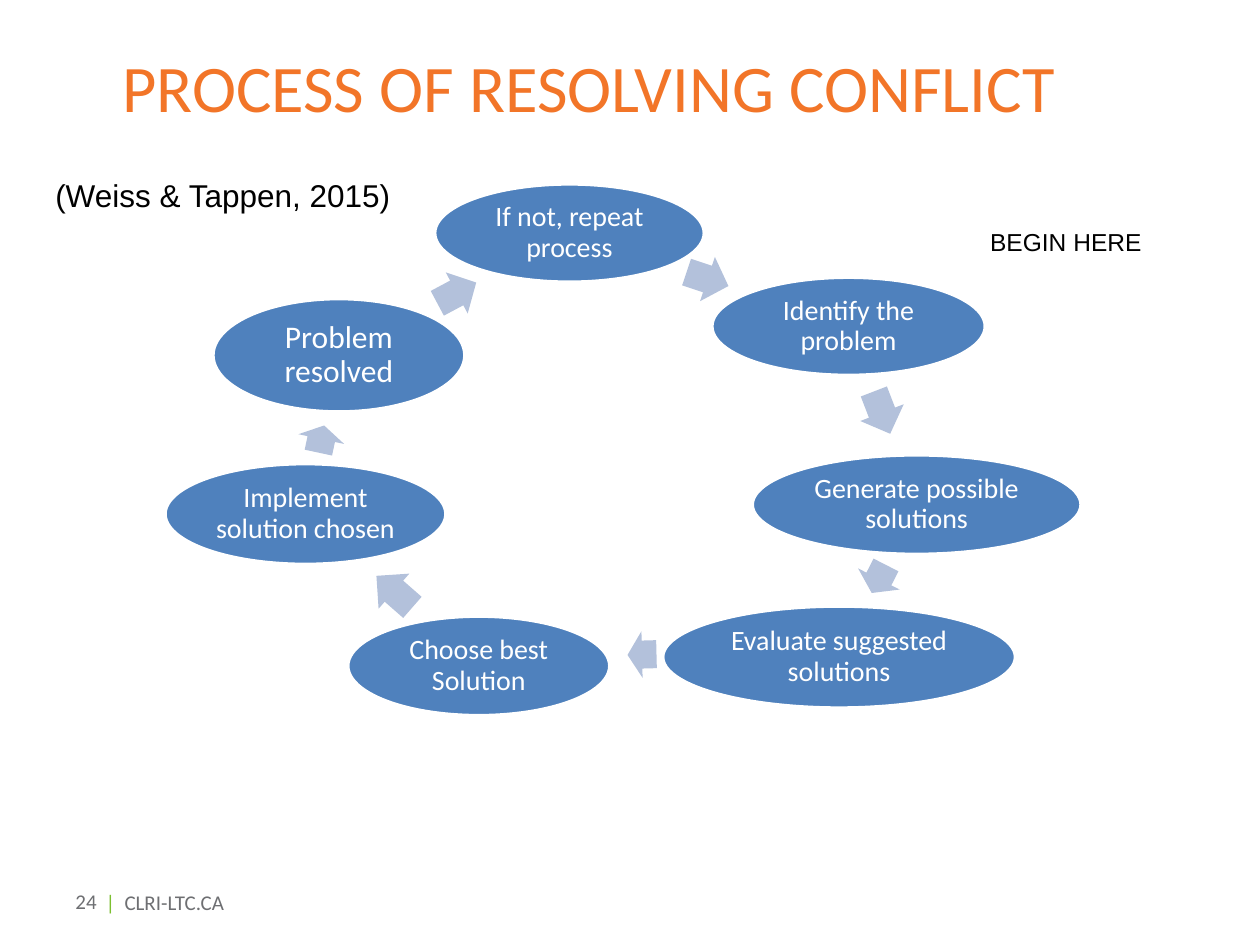
from dataclasses import dataclass

from lxml import etree
from pptx import Presentation
from pptx.dml.color import RGBColor
from pptx.enum.shapes import MSO_SHAPE
from pptx.enum.text import MSO_ANCHOR, MSO_AUTO_SIZE, PP_ALIGN
from pptx.oxml.ns import qn
from pptx.util import Inches, Pt

OVAL, ARROW = MSO_SHAPE.OVAL, MSO_SHAPE.RIGHT_ARROW
TOP, MIDDLE = MSO_ANCHOR.TOP, MSO_ANCHOR.MIDDLE
LEFT, CENTER = PP_ALIGN.LEFT, PP_ALIGN.CENTER
FIXED = MSO_AUTO_SIZE.NONE

WIDE, HIGH = 10, 7.5
COLS, ROWS = 100, 75


@dataclass(frozen=True)
class Theme:
    head: str = "F27528"
    step: str = "4F81BD"
    arrow: str = "B3C1DB"
    light: str = "FFFFFF"
    dark: str = "000000"
    gray: str = "6E6F72"
    green: str = "7CBF30"
    main: str = "Calibri"
    plain: str = "Arial"
    title: int = 38
    large: int = 18
    body: int = 16
    note: int = 14
    foot: int = 12


class Deck:
    def __init__(self, theme):
        self.theme = theme
        self.file = Presentation()
        self.file.slide_width = Inches(WIDE)
        self.file.slide_height = Inches(HIGH)
        self.slide = self.file.slides.add_slide(self.file.slide_layouts[5])

    def place(self, col, row, wide, high):
        """Turn grid columns and rows into lengths."""
        x, y = WIDE / COLS, HIGH / ROWS
        return [Inches(n) for n in (col * x, row * y, wide * x, high * y)]

    def add_runs(self, shape, runs, size, font, anchor=TOP, align=LEFT):
        """Fill a shape's first paragraph with (text, colour) runs."""
        frame = shape.text_frame
        frame.word_wrap = True
        frame.auto_size = FIXED
        frame.vertical_anchor = anchor
        para = frame.paragraphs[0]
        para.alignment = align
        for text, color in runs:
            run = para.add_run()
            run.text = text
            run.font.size = Pt(size)
            run.font.name = font
            run.font.color.rgb = RGBColor.from_string(color)
        return para

    def title(self, text, box):
        shape = self.slide.shapes.title
        shape.left, shape.top, shape.width, shape.height = self.place(*box)
        self.add_runs(shape, [(text, self.theme.head)], self.theme.title,
                      self.theme.main, MIDDLE)

    def label(self, runs, box, size, font, anchor=TOP):
        shape = self.slide.shapes.add_textbox(*self.place(*box))
        return self.add_runs(shape, runs, size, font, anchor)

    def form(self, kind, box, color):
        shape = self.slide.shapes.add_shape(kind, *self.place(*box))
        shape.shadow.inherit = False
        shape.fill.solid()
        shape.fill.fore_color.rgb = RGBColor.from_string(color)
        shape.line.fill.background()
        return shape

    def step(self, text, box, size):
        shape = self.form(OVAL, box, self.theme.step)
        shape.line.color.rgb = RGBColor.from_string(self.theme.light)
        shape.line.width = Pt(2)
        frame = shape.text_frame
        frame.margin_left = frame.margin_right = Inches(0.02)
        frame.margin_top = frame.margin_bottom = Inches(0.02)
        para = self.add_runs(shape, [(text, self.theme.light)], size,
                             self.theme.main, MIDDLE, CENTER)
        para.line_spacing = 0.9

    def arrow(self, col, row, wide, turn):
        shape = self.form(ARROW, (col, row, wide, 3.7), self.theme.arrow)
        shape.adjustments[0], shape.adjustments[1] = 0.6, 0.5
        shape.rotation = turn

    def tab(self, para, inch):
        props = para._p.get_or_add_pPr()
        tabs = etree.SubElement(props, qn("a:tabLst"))
        etree.SubElement(tabs, qn("a:tab"), pos=str(Inches(inch)), algn="l")


def main():
    look = Theme()
    deck = Deck(look)

    # Footer
    deck.label([("24", look.gray)], (5, 69.5, 8.5, 4), look.foot,
               look.main, MIDDLE)
    foot = deck.label([("|", look.green), ("\tCLRI-LTC.CA", look.gray)],
                      (7.4, 70.1, 30.3, 3), look.foot, look.main)
    deck.tab(foot, 0.15)

    # Title
    deck.title("PROCESS OF RESOLVING CONFLICT", (8.7, 2.7, 86.7, 8.3))

    # Cycle: step text, its box, its type size, then the arrow that leaves it
    cycle = [
        ("If not, repeat process", (34.5, 14.6, 21.4, 7.8), look.body,
         (54.4, 20.3, 3.5, 18.5)),
        ("Identify the problem", (56.5, 22, 21.7, 7.8), look.body,
         (68.2, 30.9, 3.6, 68.9)),
        ("Generate possible solutions", (59.7, 36.1, 26.1, 7.9), look.body,
         (68.5, 44.1, 2.5, 117)),
        ("Evaluate suggested solutions", (52.6, 48.1, 28, 8.1), look.body,
         (49.8, 50.1, 2.3, 178.5)),
        ("Choose best Solution", (27.6, 48.9, 20.8, 7.9), look.body,
         (29.4, 45.1, 3.8, 221.2)),
        ("Implement solution chosen", (13.1, 36.8, 22.3, 8), look.body,
         (24.4, 33, 2.2, 282)),
        ("Problem resolved", (16.9, 23.7, 20, 9), look.large,
         (34.5, 21.4, 3.5, 331.9)),
    ]
    for text, box, size, arrow in cycle:
        deck.step(text, box, size)
        deck.arrow(*arrow)

    # Notes beside the cycle
    deck.label([("BEGIN HERE", look.dark)], (77.6, 17.5, 17.8, 3.4),
               look.note, look.plain)
    deck.label([("(Weiss & Tappen, 2015)", look.dark)],
               (3.4, 13.5, 31.2, 4), look.large, look.plain)

    deck.file.save("out.pptx")


if __name__ == "__main__":
    main()
